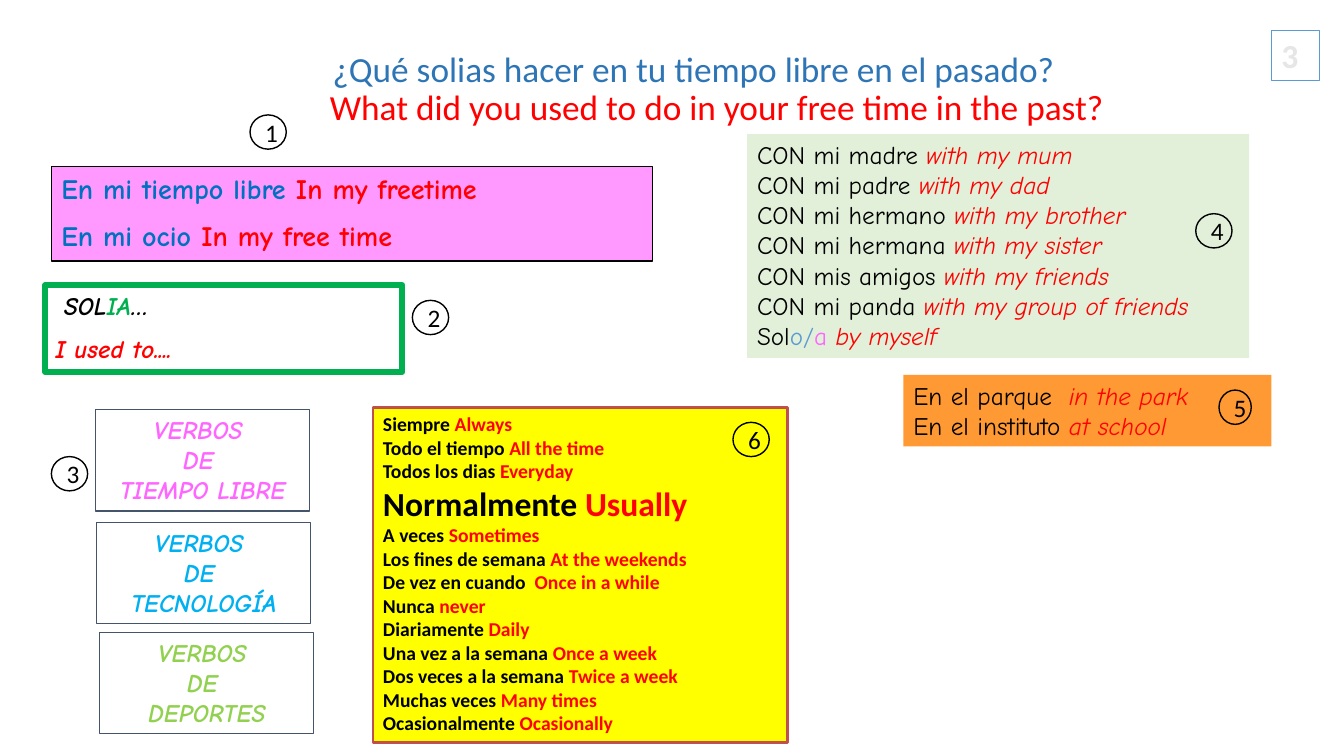
from pptx import Presentation
from pptx.dml.color import RGBColor
from pptx.enum.shapes import MSO_SHAPE
from pptx.enum.text import MSO_ANCHOR, PP_ALIGN
from pptx.util import Inches, Pt

RECT, OVAL = MSO_SHAPE.RECTANGLE, MSO_SHAPE.OVAL
TOP, MIDDLE, BOTTOM = MSO_ANCHOR.TOP, MSO_ANCHOR.MIDDLE, MSO_ANCHOR.BOTTOM
LEFT, CENTER = PP_ALIGN.LEFT, PP_ALIGN.CENTER
BODY, COMIC = "Calibri", "Comic Neue"

COLORS = {
    "black": "000000", "red": "FF0000", "title": "2E75B6", "blue": "0070C0",
    "sky": "5B9BD5", "cyan": "00B0F0", "green": "00B050", "lime": "92D050",
    "pink": "FF66FF", "slate": "44546A", "brick": "C0504D", "gray": "E7E6E6",
    "pink_fill": "FF99FF", "green_fill": "E2F0D9", "orange_fill": "FF9933",
    "yellow_fill": "FFFF00",
}

# Content: Spanish and English pairs
QUESTION = ("¿Qué solias hacer en tu tiempo libre en el pasado? ",
            "What did you used to do in your free time in the past?")
PAGE_NUMBER = "3"
FREE_TIME = [("En mi tiempo libre ", "In my freetime"),
             ("En mi ocio ", "In my free time")]
COMPANIONS = [
    ("CON mi madre ", "with my mum"),
    ("CON mi padre ", "with my dad"),
    ("CON mi hermano ", "with my brother"),
    ("CON mi hermana ", "with my sister"),
    ("CON mis amigos ", "with my friends"),
    ("CON mi panda ", "with my group of friends"),
]
PLACES = [("En el parque  ", "in the park"), ("En el instituto ", "at school")]
FREQUENCIES = [
    ("Siempre ", "Always"),
    ("Todo el tiempo ", "All the time"),
    ("Todos los dias ", "Everyday"),
    ("Normalmente ", "Usually"),
    ("A veces ", "Sometimes"),
    ("Los fines de semana ", "At the weekends"),
    ("De vez en cuando  ", "Once in a while"),
    ("Nunca ", "never"),
    ("Diariamente ", "Daily"),
    ("Una vez a la semana ", "Once a week"),
    ("Dos veces a la semana ", "Twice a week"),
    ("Muchas veces ", "Many times"),
    ("Ocasionalmente ", "Ocasionally"),
]
BIG_FREQUENCY = "Normalmente "
VERB_GROUPS = [  # topic, color, left, top
    ("TIEMPO LIBRE", "pink", 0.95, 4.06),
    ("TECNOLOGÍA", "cyan", 0.96, 5.18),
    ("DEPORTES", "lime", 0.99, 6.27),
]
STEPS = [  # left, top, width
    (2.48, 1.14, 0.36), (4.09, 2.98, 0.36), (0.51, 4.53, 0.36),
    (11.86, 2.12, 0.36), (12.09, 3.87, 0.32), (7.27, 4.19, 0.36),
]

prs = Presentation()
prs.slide_width, prs.slide_height = Inches(13.33), Inches(7.5)
slide = prs.slides.add_slide(prs.slide_layouts[6])


def rgb(name):
    return RGBColor.from_string(COLORS[name])


def panel(box, kind=RECT, fill=None, line=None, weight=0.75):
    shape = slide.shapes.add_shape(kind, *map(Inches, box))
    shape.shadow.inherit = False
    if fill:
        shape.fill.solid()
        shape.fill.fore_color.rgb = rgb(fill)
    else:
        shape.fill.background()
    if line:
        shape.line.color.rgb = rgb(line)
        shape.line.width = Pt(weight)
    else:
        shape.line.fill.background()
    return shape


def write(shape, lines, size=18, font=COMIC, bold=False, italic=False,
          align=LEFT, anchor=TOP, gap=0):
    """Each line is a list of (text, color, format changes) runs."""
    frame = shape.text_frame
    frame.word_wrap = True
    frame.vertical_anchor = anchor
    for index, runs in enumerate(lines):
        paragraph = frame.paragraphs[0] if index == 0 else frame.add_paragraph()
        paragraph.alignment = align
        paragraph.space_before = Pt(gap if index else 0)
        for text, color, changes in runs:
            if text == "\n":
                paragraph.add_line_break()
                continue
            run = paragraph.add_run()
            run.text = text
            run.font.name = font
            run.font.size = Pt(changes.get("size", size))
            run.font.bold = bold
            run.font.italic = changes.get("italic", italic)
            run.font.color.rgb = rgb(color)


def bilingual(pairs, color="black", **english):
    return [[(es, color, {}), (en, "red", english)] for es, en in pairs]


# Title, with a hanging indent
title = slide.shapes.add_textbox(*map(Inches, (2.42, 0.37, 9, 0.95)))
write(title, [[(QUESTION[0], "title", {}), ("\n", None, {}),
               (QUESTION[1], "red", {})]],
      size=25.2, font=BODY, align=CENTER, anchor=BOTTOM)
heading = title.text_frame.paragraphs[0]
heading.line_spacing = 0.9
indent = heading._p.get_or_add_pPr()
indent.set("marL", str(Inches(0.38)))
indent.set("indent", str(-Inches(0.38)))

# Page number
write(panel((12.61, 0.3, 0.48, 0.5), line="sky"),
      [[(PAGE_NUMBER, "gray", {})]], size=24, font=BODY, bold=True, anchor=MIDDLE)

# Opening phrases
write(panel((0.51, 1.65, 5.96, 0.94), fill="pink_fill", line="black"),
      bilingual(FREE_TIME, "blue"), size=20, bold=True, gap=10)
write(panel((0.45, 2.83, 3.54, 0.86), line="green", weight=4.5),
      [[(" SOL", "black", {}), ("IA", "green", {}), ("…", "black", {})],
       [("I used to....", "red", {})]], bold=True, italic=True, gap=9)

# Verb groups
for topic, color, left, top in VERB_GROUPS:
    write(panel((left, top, 2.12, 1.01), line="slate"),
          [[(text, color, {})] for text in ("VERBOS ", "DE ", topic)],
          bold=True, italic=True, align=CENTER)

# Companions and places
alone = [("Sol", "black", {}), ("o/", "sky", {}), ("a ", "pink", {}),
         ("by myself", "red", {"italic": True})]
write(panel((7.41, 1.33, 4.98, 2.22), fill="green_fill"),
      bilingual(COMPANIONS, italic=True) + [alone])
write(panel((8.96, 3.72, 3.65, 0.71), fill="orange_fill"),
      bilingual(PLACES, italic=True))

# Frequency expressions
frequency_lines = []
for pair in FREQUENCIES:
    size = 24 if pair[0] == BIG_FREQUENCY else 14
    frequency_lines.append([(text, color, {"size": size})
                            for text, color in zip(pair, ("black", "red"))])
write(panel((3.7, 4.04, 4.11, 3.33), fill="yellow_fill", line="brick", weight=2),
      frequency_lines, font=BODY, bold=True)

# Numbered steps
for number, (left, top, width) in enumerate(STEPS, 1):
    write(panel((left, top, width, 0.34), OVAL, line="black", weight=1),
          [[(str(number), "black", {})]], font=BODY, align=CENTER, anchor=MIDDLE)

prs.save("out.pptx")
